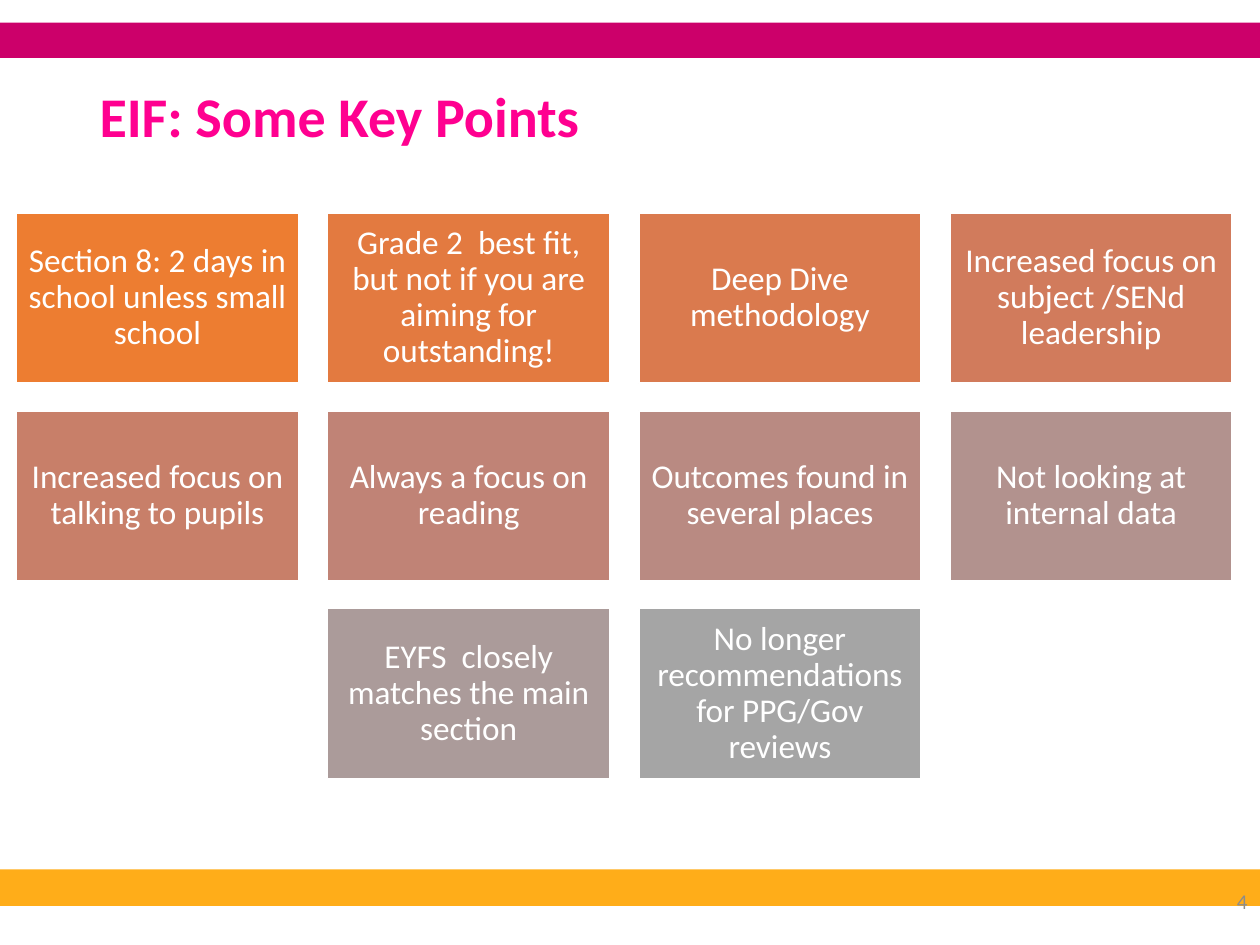
from dataclasses import dataclass

from pptx import Presentation
from pptx.dml.color import RGBColor
from pptx.enum.shapes import MSO_SHAPE as Shape
from pptx.enum.text import MSO_ANCHOR as Anchor, MSO_AUTO_SIZE as AutoSize, PP_ALIGN as Align
from pptx.util import Inches, Pt

FONT = "Calibri"
WHITE = "FFFFFF"
COLUMNS = 4
CARD_WIDTH, CARD_HEIGHT = 2.24, 1.35
GAP_X, GAP_Y = 0.23, 0.22
GRID_LEFT, GRID_TOP = 0.13, 1.69
CARD_INSET = 0.08


@dataclass
class Card:
    text: str
    fill: str


CARDS = [
    Card("Section 8: 2 days in school unless small school", "ED7D31"),
    Card("Grade 2  best fit, but not if you are aiming for outstanding!", "E37A40"),
    Card("Deep Dive methodology", "DA7A4E"),
    Card("Increased focus on subject /SENd leadership", "D17B5C"),
    Card("Increased focus on talking to pupils", "C87F69"),
    Card("Always a focus on reading", "C08376"),
    Card("Outcomes found in several places", "B98A82"),
    Card("Not looking at internal data", "B2928E"),
    Card("EYFS  closely matches the main section", "AB9B9A"),
    Card("No longer recommendations for PPG/Gov reviews", "A5A5A5"),
]


def color(value: str) -> RGBColor:
    return RGBColor.from_string(value)


def add_rectangle(page, left: float, top: float, width: float, height: float, fill: str):
    box = page.shapes.add_shape(
        Shape.RECTANGLE, Inches(left), Inches(top), Inches(width), Inches(height))
    box.shadow.inherit = False
    box.fill.solid()
    box.fill.fore_color.rgb = color(fill)
    box.line.fill.background()
    return box


def write(box, text: str, size: int, ink: str, align, bold: bool = False, spacing: float = 1.0) -> None:
    frame = box.text_frame
    frame.word_wrap = True
    frame.auto_size = AutoSize.NONE
    frame.vertical_anchor = Anchor.MIDDLE
    para = frame.paragraphs[0]
    para.alignment = align
    para.line_spacing = spacing
    span = para.add_run()
    span.text = text
    span.font.name = FONT
    span.font.size = Pt(size)
    span.font.bold = bold
    span.font.color.rgb = color(ink)


def add_card(page, card: Card, left: float, top: float) -> None:
    box = add_rectangle(page, left, top, CARD_WIDTH, CARD_HEIGHT, card.fill)
    box.line.color.rgb = color(WHITE)
    box.line.width = Pt(1)
    frame = box.text_frame
    frame.margin_left = frame.margin_right = Inches(CARD_INSET)
    frame.margin_top = frame.margin_bottom = Inches(CARD_INSET)
    write(box, card.text, 19, WHITE, Align.CENTER, spacing=0.9)


def add_card_grid(page, cards: list[Card]) -> None:
    step_x, step_y = CARD_WIDTH + GAP_X, CARD_HEIGHT + GAP_Y
    for start in range(0, len(cards), COLUMNS):
        row = cards[start:start + COLUMNS]
        # A short row is centred under the full ones
        left = GRID_LEFT + (COLUMNS - len(row)) / 2 * step_x
        top = GRID_TOP + start // COLUMNS * step_y
        for column, card in enumerate(row):
            add_card(page, card, left + column * step_x, top)


def main() -> None:
    deck = Presentation()
    deck.slide_width, deck.slide_height = Inches(10), Inches(7.5)
    page = deck.slides.add_slide(deck.slide_layouts[5])

    # Coloured bands
    add_rectangle(page, 0, 6.9, 10, 0.29, "FFAD19")
    add_rectangle(page, 0, 0.18, 10, 0.28, "CC006A")

    # Title
    title = page.shapes.title
    title.left, title.top = Inches(0.69), Inches(0.4)
    title.width, title.height = Inches(8.62), Inches(1.09)
    write(title, "EIF: Some Key Points", 32, "FF0090", Align.LEFT, bold=True, spacing=0.9)

    # Key points
    add_card_grid(page, CARDS)

    # Page number
    number = page.shapes.add_textbox(Inches(7.75), Inches(6.95), Inches(2.25), Inches(0.4))
    write(number, "4", 12, "8C8C8C", Align.RIGHT)

    deck.save("out.pptx")


if __name__ == "__main__":
    main()
